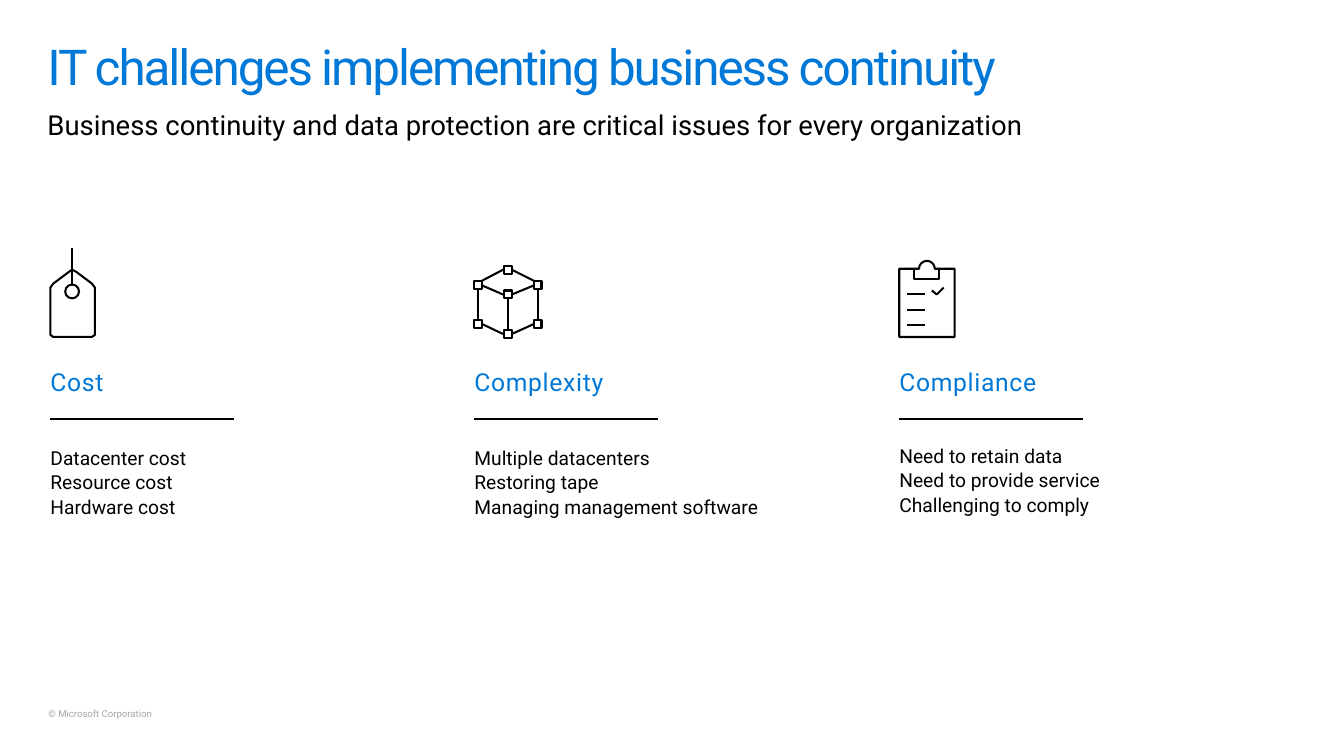
from math import cos, pi, sin

from lxml.etree import SubElement
from pptx import Presentation
from pptx.dml.color import RGBColor
from pptx.enum.shapes import MSO_CONNECTOR
from pptx.enum.text import MSO_ANCHOR
from pptx.oxml.ns import qn
from pptx.util import Pt

PX = 9144
FONT = "Roboto"
COLORS = {"blue": "0078D7", "black": "000000", "gray": "A6A6A6", "white": "FFFFFF"}
COLUMNS = [
    (51, 444, "Cost", ["Datacenter cost", "Resource cost", "Hardware cost"]),
    (480, 444, "Complexity",
     ["Multiple datacenters", "Restoring tape", "Managing management software"]),
    (910, 442, "Compliance",
     ["Need to retain data", "Need to provide service", "Challenging to comply"]),
]


def color(name):
    return RGBColor.from_string(COLORS[name])


def add_text(slide, box, lines, size, tint="black", track=0, lead=0.9, gap=0):
    shape = slide.shapes.add_textbox(*(n * PX for n in box))
    frame = shape.text_frame
    frame.word_wrap = True
    frame.vertical_anchor = MSO_ANCHOR.TOP
    frame.margin_left = frame.margin_right = 0
    frame.margin_top = frame.margin_bottom = 0
    for i, line in enumerate(lines):
        para = frame.add_paragraph() if i else frame.paragraphs[0]
        run = para.add_run()
        run.text = line
        if track:
            run._r.get_or_add_rPr().set("spc", str(track))
        para.line_spacing = lead
        if i:
            para.space_before = Pt(gap)
        para.font.name = FONT
        para.font.size = Pt(size)
        para.font.color.rgb = color(tint)


def ink(line):
    line.color.rgb = color("black")
    line.width = Pt(1.5)


def add_rule(slide, *ends):
    rule = slide.shapes.add_connector(MSO_CONNECTOR.STRAIGHT, *(n * PX for n in ends))
    ink(rule.line)
    SubElement(rule._element.spPr, qn("a:effectLst"))


def add_icon(slide, loops, strokes, fill=None):
    pen = None
    for points in loops + strokes:
        first, *rest = [(x * PX, y * PX) for x, y in points]
        if pen is None:
            pen = slide.shapes.build_freeform(*first)
        else:
            pen.move_to(*first)
        pen.add_line_segments(rest, close=points in loops)
    shape = pen.convert_to_shape()
    shape.shadow.inherit = False
    if fill:
        shape.fill.solid()
        shape.fill.fore_color.rgb = color(fill)
    else:
        shape.fill.background()
    ink(shape.line)


def get_arc(x, y, size, turn, count):
    angles = [pi + turn * i / count for i in range(count + 1)]
    return [(x + size * cos(a), y + size * sin(a)) for a in angles]


def draw_tag(slide):
    body = [(93, 341), (54, 341), (51, 339), (51, 291), (54, 287), (70, 275),
            (73, 273), (77, 275), (93, 287), (96, 291), (96, 339)]
    hole = get_arc(73, 295, 7, 2 * pi, 12)[:-1]
    add_icon(slide, [body, hole], [[(73, 288), (73, 251)]])


def draw_cube(slide):
    nodes = [(484, 288), (514, 273), (544, 288), (514, 298),
             (484, 328), (544, 328), (514, 338)]
    boxes = [[(x - 4, y - 4), (x + 4, y - 4), (x + 4, y + 4), (x - 4, y + 4)]
             for x, y in nodes]
    edges = [
        [(488, 284), (509, 273)], [(518, 273), (540, 284)], [(518, 298), (540, 289)],
        [(488, 289), (509, 298)], [(518, 338), (540, 328)], [(509, 338), (488, 328)],
        [(484, 293), (484, 324)], [(514, 302), (514, 333)], [(544, 293), (544, 324)]]
    add_icon(slide, boxes, edges, "white")


def draw_board(slide):
    board = [(966, 272), (966, 341), (910, 341), (910, 272),
             *get_arc(938, 272, 8, pi, 8)]
    clip = [(925, 272), (925, 282), (950, 282), (950, 272)]
    rows = [[(918, y), (936, y)] for y in (298, 314, 329)]
    check = [(943, 294), (948, 298), (955, 291)]
    add_icon(slide, [board], [clip, *rows, check])


def add_column(slide, x, top, head, lines):
    add_text(slide, (x, 375, 223, 35), [head], 18, "blue", track=50)
    add_rule(slide, x, 424, x + 186, 424)
    add_text(slide, (x, top + 10, 295, 73), lines, 14, gap=2.8)


def main():
    deck = Presentation()
    deck.slide_width = 1360 * PX
    deck.slide_height = 765 * PX
    slide = deck.slides.add_slide(deck.slide_layouts[6])
    add_text(slide, (48, 43, 1201, 67),
             ["IT challenges implementing business continuity"], 36, "blue", track=-150)
    add_text(slide, (48, 109, 1265, 34),
             ["Business continuity and data protection are critical issues "
              "for every organization"], 20, lead=1.0)
    for column in COLUMNS:
        add_column(slide, *column)
    for draw in (draw_tag, draw_cube, draw_board):
        draw(slide)
    add_text(slide, (49, 718, 120, 11), ["© Microsoft Corporation"], 7, "gray")
    deck.save("out.pptx")


if __name__ == "__main__":
    main()
